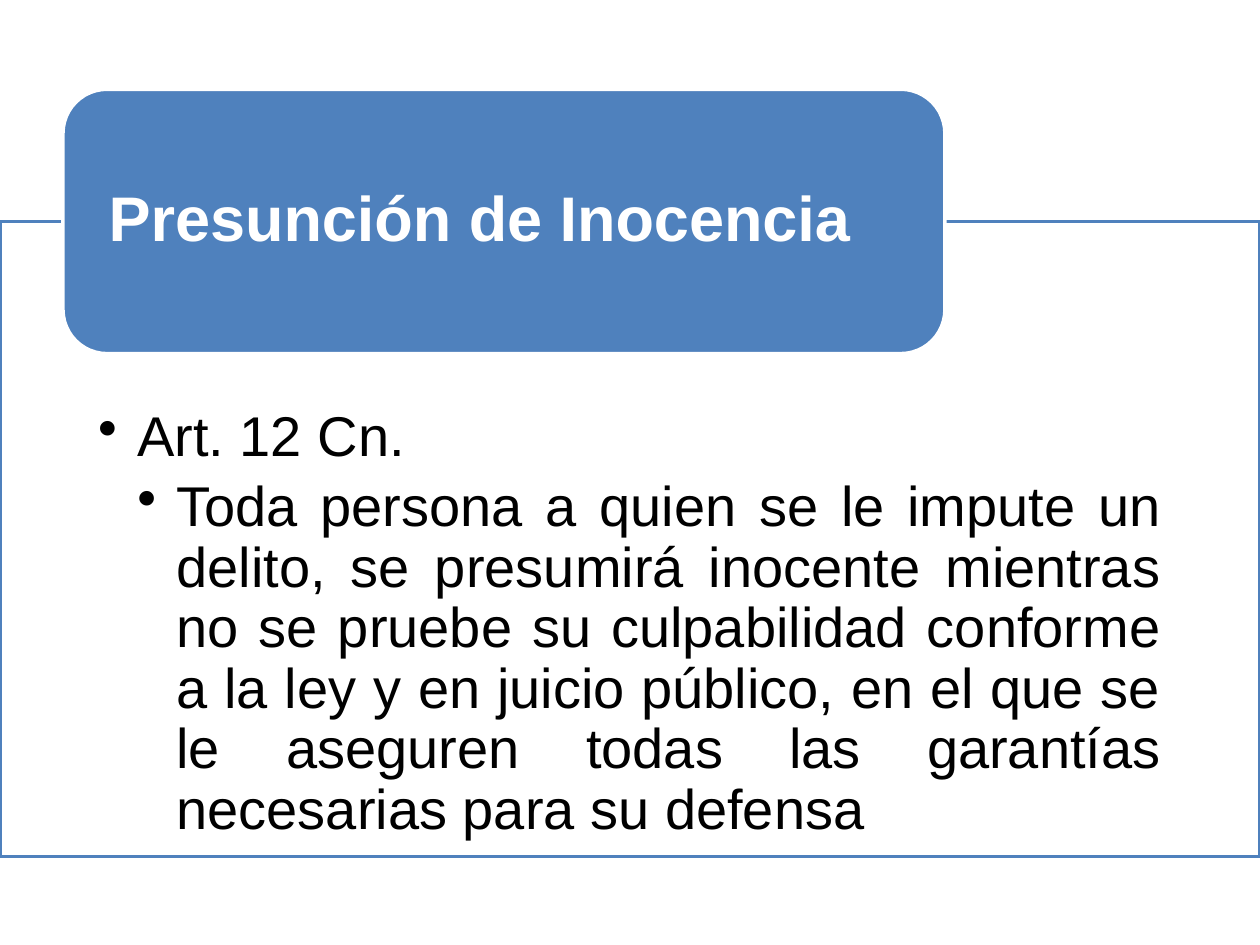
from dataclasses import dataclass

from lxml.etree import SubElement
from pptx import Presentation
from pptx.dml.color import RGBColor
from pptx.enum.shapes import MSO_SHAPE
from pptx.enum.text import MSO_ANCHOR, PP_ALIGN
from pptx.oxml.ns import qn
from pptx.util import Cm, Pt


@dataclass(frozen=True)
class Theme:
    font: str = "Arial"
    blue: RGBColor = RGBColor(0x4F, 0x81, 0xBD)
    white: RGBColor = RGBColor(0xFF, 0xFF, 0xFF)
    black: RGBColor = RGBColor(0, 0, 0)
    head: float = 36
    body: float = 32
    line: float = 2


@dataclass(frozen=True)
class Para:
    text: str
    size: float
    color: RGBColor
    bold: bool = False
    level: int = 0  # 0 means no bullet
    after: float = 0


@dataclass(frozen=True)
class Box:
    kind: MSO_SHAPE
    area: tuple[float, float, float, float]  # left, top, width, height in cm
    pad: tuple[float, float, float, float]  # left, top, right, bottom in cm
    fill: RGBColor
    line: RGBColor
    anchor: MSO_ANCHOR
    paras: tuple[Para, ...]
    alpha: int = 100


THEME = Theme()
STEP = 0.79  # bullet indent in cm


def add_para(para, item: Para) -> None:
    para.alignment = PP_ALIGN.JUSTIFY
    para.line_spacing = 0.9
    para.space_before = Pt(0)
    para.space_after = Pt(item.after)
    if item.level:
        para.level = item.level
        props = para._p.get_or_add_pPr()
        props.set("marL", str(Cm(STEP * item.level)))
        props.set("indent", str(-Cm(STEP)))
        SubElement(props, qn("a:buChar"), char="•")
    run = para.add_run()
    run.text = item.text
    font = run.font
    font.name, font.size, font.bold = THEME.font, Pt(item.size), item.bold
    font.color.rgb = item.color


def add_box(slide, box: Box) -> None:
    shape = slide.shapes.add_shape(box.kind, *map(Cm, box.area))
    shape.shadow.inherit = False
    shape.fill.solid()
    shape.fill.fore_color.rgb = box.fill
    if box.alpha < 100:
        tone = shape._element.spPr.find(qn("a:solidFill"))[0]
        SubElement(tone, qn("a:alpha"), val=str(box.alpha * 1000))
    shape.line.color.rgb = box.line
    shape.line.width = Pt(THEME.line)

    frame = shape.text_frame
    frame.word_wrap = True
    frame.vertical_anchor = box.anchor
    (frame.margin_left, frame.margin_top,
     frame.margin_right, frame.margin_bottom) = map(Cm, box.pad)
    for i, item in enumerate(box.paras):
        add_para(frame.add_paragraph() if i else frame.paragraphs[0], item)


def main() -> None:
    deck = Presentation()
    deck.slide_width, deck.slide_height = Cm(25.4), Cm(19.05)
    slide = deck.slides.add_slide(deck.slide_layouts[6])

    # Framed body with the article
    body = (
        Para("Art. 12 Cn.", THEME.body, THEME.black, level=1, after=5.5),
        Para("Toda persona a quien se le impute un delito, se presumirá "
             "inocente mientras no se pruebe su culpabilidad conforme a la "
             "ley y en juicio público, en el que se le aseguren todas las "
             "garantías necesarias para su defensa",
             THEME.body, THEME.black, level=2, after=5.5),
    )
    add_box(slide, Box(MSO_SHAPE.RECTANGLE, (0, 4.47, 25.4, 12.8),
                       (1.98, 3.76, 1.98, 0.64), THEME.white, THEME.blue,
                       MSO_ANCHOR.TOP, body, alpha=90))

    # Title tab over the frame's top edge
    head = (Para("Presunción de Inocencia", THEME.head, THEME.white, bold=True),)
    add_box(slide, Box(MSO_SHAPE.ROUNDED_RECTANGLE, (1.27, 1.8, 17.78, 5.33),
                       (0.66, 0, 0.66, 0), THEME.blue, THEME.white,
                       MSO_ANCHOR.MIDDLE, head))

    deck.save("out.pptx")


if __name__ == "__main__":
    main()
